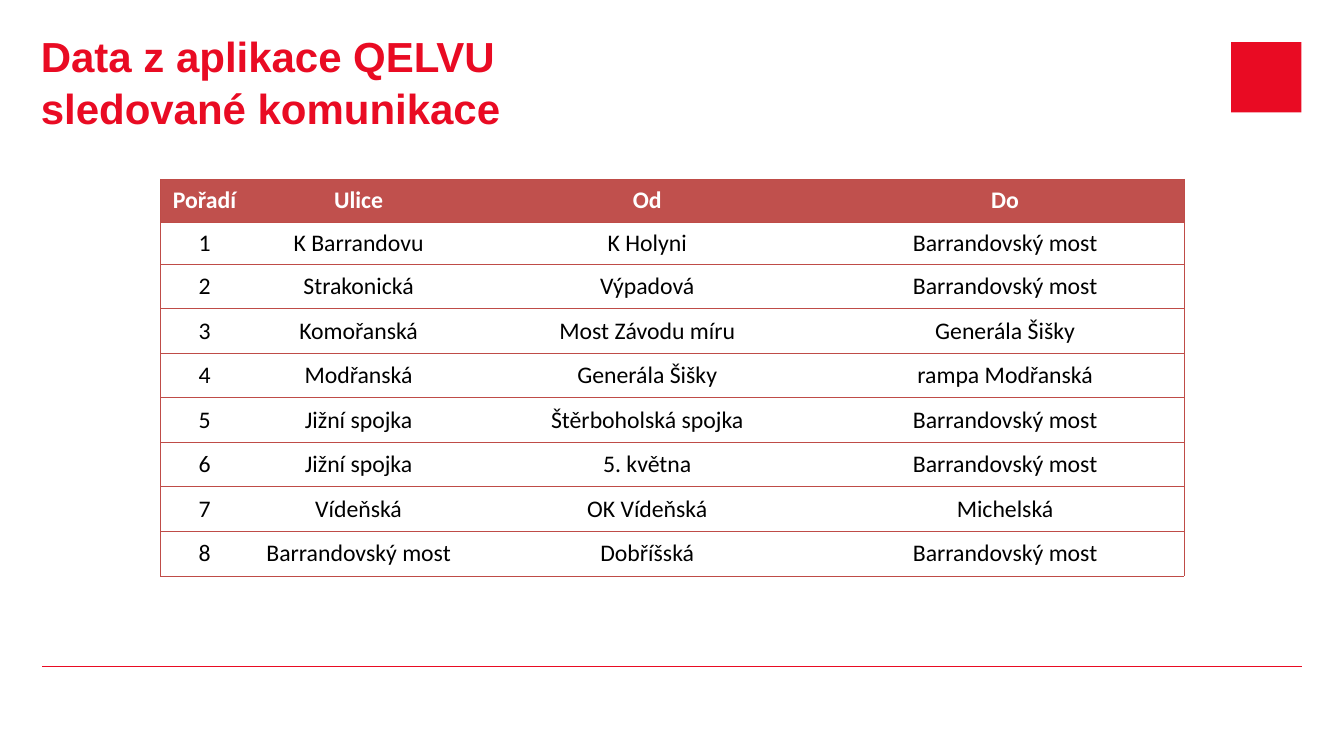
from pptx import Presentation
from pptx.dml.color import RGBColor
from pptx.enum.shapes import MSO_CONNECTOR, MSO_SHAPE
from pptx.enum.text import MSO_ANCHOR, PP_ALIGN
from pptx.oxml import parse_xml
from pptx.oxml.ns import nsdecls
from pptx.util import Cm, Pt
from lxml.etree import SubElement

RED = RGBColor(0xE9, 0x0B, 0x23)
HEADER = RGBColor(0xC0, 0x50, 0x4D)
BORDER = RGBColor(0xBF, 0x4C, 0x48)
WHITE = RGBColor(0xFF, 0xFF, 0xFF)
BLACK = RGBColor(0, 0, 0)

STREETS = [
    ("Pořadí", "Ulice", "Od", "Do"),
    ("1", "K Barrandovu", "K Holyni", "Barrandovský most"),
    ("2", "Strakonická", "Výpadová", "Barrandovský most"),
    ("3", "Komořanská", "Most Závodu míru", "Generála Šišky"),
    ("4", "Modřanská", "Generála Šišky", "rampa Modřanská"),
    ("5", "Jižní spojka", "Štěrboholská spojka", "Barrandovský most"),
    ("6", "Jižní spojka", "5. května", "Barrandovský most"),
    ("7", "Vídeňská", "OK Vídeňská", "Michelská"),
    ("8", "Barrandovský most", "Dobříšská", "Barrandovský most"),
]
COLUMN_WIDTHS = (3.68, 9.12, 14.87, 14.87)
ROW_HEIGHTS = (1.77, 1.76) + (1.85,) * 7


def write(tf, text, font="Calibri", size=28, color=BLACK, bold=False,
          align=PP_ALIGN.CENTER, spacing=1.0):
    """Fill a text frame with one formatted paragraph."""
    p = tf.paragraphs[0]
    p.alignment = align
    p.line_spacing = spacing
    p.text = text
    for r in p.runs:
        r.font.name = font
        r.font.size = Pt(size)
        r.font.bold = bold
        r.font.color.rgb = color


def set_borders(cell, visible):
    """Draw the visible sides of a cell and clear the others."""
    tcPr = cell._tc.get_or_add_tcPr()
    for i, side in enumerate(("L", "R", "T", "B")):
        fill = (f'<a:solidFill><a:srgbClr val="{BORDER}"/></a:solidFill>'
                if side in visible else "<a:noFill/>")
        tcPr.insert(i, parse_xml(
            f'<a:ln{side} {nsdecls("a")} w="{Pt(0.75)}">{fill}</a:ln{side}>'))


def add_title(s, x, y, w, h):
    tf = s.shapes.add_textbox(Cm(x), Cm(y), Cm(w), Cm(h)).text_frame
    tf.word_wrap = True
    tf.vertical_anchor = MSO_ANCHOR.BOTTOM
    tf.margin_left = tf.margin_right = tf.margin_top = tf.margin_bottom = 0
    write(tf, "Data z aplikace QELVU\vsledované komunikace", font="Arial",
          size=49.5, color=RED, bold=True, align=PP_ALIGN.LEFT, spacing=1.04)


def add_emblem(s, x, y, side):
    sp = s.shapes.add_shape(MSO_SHAPE.RECTANGLE, Cm(x), Cm(y), Cm(side), Cm(side))
    sp.shadow.inherit = False
    sp.fill.solid()
    sp.fill.fore_color.rgb = RED
    sp.line.fill.background()


def add_street_table(s, x, y):
    table = s.shapes.add_table(
        len(STREETS), len(COLUMN_WIDTHS), Cm(x), Cm(y),
        Cm(sum(COLUMN_WIDTHS)), Cm(sum(ROW_HEIGHTS))).table
    table.horz_banding = False
    for column, width in zip(table.columns, COLUMN_WIDTHS):
        column.width = Cm(width)
    for row, height in zip(table.rows, ROW_HEIGHTS):
        row.height = Cm(height)
    last = len(COLUMN_WIDTHS) - 1
    for i, values in enumerate(STREETS):
        is_header = i == 0
        for j, value in enumerate(values):
            cell = table.cell(i, j)
            cell.vertical_anchor = MSO_ANCHOR.MIDDLE
            cell.fill.solid()
            cell.fill.fore_color.rgb = HEADER if is_header else WHITE
            write(cell.text_frame, value, bold=is_header,
                  color=WHITE if is_header else BLACK)
            set_borders(cell, "TB" + "L" * (j == 0) + "R" * (j == last))


def add_footer_line(s, x, y, w):
    line = s.shapes.add_connector(
        MSO_CONNECTOR.STRAIGHT, Cm(x), Cm(y), Cm(x + w), Cm(y))
    line.line.color.rgb = RED
    line.line.width = Pt(1.65)
    spPr = line._element.spPr
    SubElement(spPr, f"{{{spPr.nsmap['a']}}}effectLst")


def main():
    prs = Presentation()
    prs.slide_width, prs.slide_height = Cm(55.85), Cm(31.42)
    s = prs.slides.add_slide(prs.slide_layouts[6])
    s.background.fill.solid()
    s.background.fill.fore_color.rgb = WHITE

    add_footer_line(s, 1.75, 27.71, 52.35)
    add_emblem(s, 51.16, 1.75, 2.92)
    add_title(s, 1.7, 1.3, 47.17, 4.24)
    add_street_table(s, 6.66, 7.45)
    prs.save("out.pptx")


if __name__ == "__main__":
    main()
